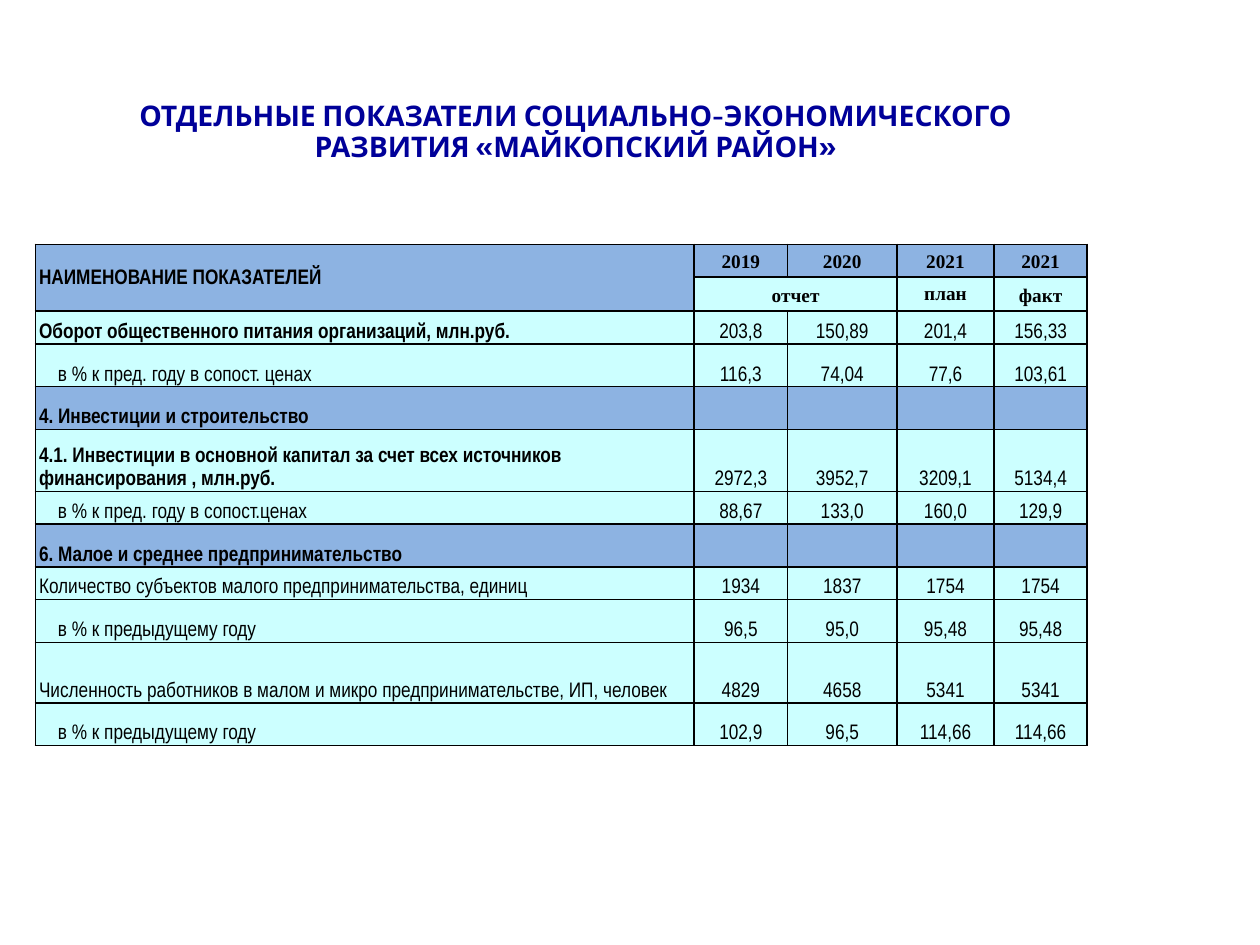
from lxml import etree
from pptx import Presentation
from pptx.dml.color import RGBColor
from pptx.enum.text import MSO_ANCHOR, PP_ALIGN
from pptx.oxml.ns import qn
from pptx.util import Inches, Pt

LEFT, MID = PP_ALIGN.LEFT, PP_ALIGN.CENTER
CENTER, BOTTOM = MSO_ANCHOR.MIDDLE, MSO_ANCHOR.BOTTOM
HUES = {"navy": "000099", "ink": "000000", "blue": "8DB3E2", "aqua": "CCFFFF"}
SANS, SERIF = "Arial Narrow", "Times New Roman"


def write(frame, text, font=SANS, size=12, bold=False, hue="ink",
          align=LEFT, space=1.15, indent=0):
    para = frame.paragraphs[0]
    para.text = text
    para.alignment = align
    para.line_spacing = space
    if indent:
        para._p.get_or_add_pPr().set("marL", str(Inches(indent)))
    face = para.font
    face.name, face.size, face.bold = font, Pt(size), bold
    face.color.rgb = RGBColor.from_string(HUES[hue])


def style(cell, hue, anchor):
    cell.margin_left = cell.margin_right = Inches(0.03)
    cell.margin_top = cell.margin_bottom = Inches(0.01)
    cell.vertical_anchor = anchor
    props = cell._tc.get_or_add_tcPr()
    for side in ("a:lnL", "a:lnR", "a:lnT", "a:lnB"):
        line = etree.SubElement(props, qn(side), w=str(Pt(1)))
        fill = etree.SubElement(line, qn("a:solidFill"))
        etree.SubElement(fill, qn("a:srgbClr"), val=HUES["ink"])
    cell.fill.solid()
    cell.fill.fore_color.rgb = RGBColor.from_string(HUES[hue])


deck = Presentation()
deck.slide_width, deck.slide_height = Inches(10), Inches(7.5)
wide, high = deck.slide_width, deck.slide_height
slide = deck.slides.add_slide(deck.slide_layouts[5])

# Title
title = slide.shapes.title
title.left, title.top = int(wide * 0.051), int(high * 0.07)
title.width, title.height = int(wide * 0.811), int(high * 0.136)
frame = title.text_frame
frame.word_wrap = True
frame.vertical_anchor = BOTTOM
frame.margin_left = frame.margin_right = Inches(0.05)
frame.margin_top, frame.margin_bottom = 0, Inches(0.25)
write(frame, "ОТДЕЛЬНЫЕ ПОКАЗАТЕЛИ СОЦИАЛЬНО-ЭКОНОМИЧЕСКОГО РАЗВИТИЯ «МАЙКОПСКИЙ РАЙОН»",
      font="Cabin", size=16.2, bold=True, hue="navy", align=MID, space=0.9)

# Body rows: kind, row height, label, values
ROWS = [
    ("bold", 0.26, "Оборот общественного питания организаций, млн.руб.",
     "203,8 150,89 201,4 156,33"),
    ("sub", 0.34, "в % к пред. году в сопост. ценах", "116,3 74,04 77,6 103,61"),
    ("head", 0.34, "4. Инвестиции и строительство", ""),
    ("bold", 0.49, "4.1. Инвестиции в основной капитал за счет всех источников "
     "финансирования , млн.руб.", "2972,3 3952,7 3209,1 5134,4"),
    ("sub", 0.26, "в % к пред. году в сопост.ценах", "88,67 133,0 160,0 129,9"),
    ("head", 0.34, "6. Малое и среднее предпринимательство", ""),
    ("plain", 0.26, "Количество субъектов малого предпринимательства, единиц",
     "1934 1837 1754 1754"),
    ("sub", 0.34, "в % к предыдущему году", "96,5 95,0 95,48 95,48"),
    ("plain", 0.48, "Численность работников в малом и микро предпринимательстве, "
     "ИП, человек", "4829 4658 5341 5341"),
    ("sub", 0.34, "в % к предыдущему году", "102,9 96,5 114,66 114,66"),
]
COLS = [5.23, 0.74, 0.87, 0.77, 0.74]
TALL = [0.26, 0.27] + [row[1] for row in ROWS]

# Table grid
table = slide.shapes.add_table(
    len(TALL), len(COLS), int(wide * 0.028), int(high * 0.2587),
    Inches(sum(COLS)), Inches(sum(TALL))).table
table.first_row = table.horz_banding = False
for col, size in zip(table.columns, COLS):
    col.width = Inches(size)
for row, size in zip(table.rows, TALL):
    row.height = Inches(size)

# Header
for r, hue in enumerate(("blue", "aqua")):
    for c in range(len(COLS)):
        style(table.cell(r, c), hue if c else "blue", CENTER)
table.cell(0, 0).merge(table.cell(1, 0))
table.cell(1, 1).merge(table.cell(1, 2))
write(table.cell(0, 0).text_frame, "НАИМЕНОВАНИЕ ПОКАЗАТЕЛЕЙ", bold=True)
HEADS = [(0, 1, "2019"), (0, 2, "2020"), (0, 3, "2021"), (0, 4, "2021"),
         (1, 1, "отчет"), (1, 3, "план"), (1, 4, "факт")]
for r, c, text in HEADS:
    write(table.cell(r, c).text_frame, text, font=SERIF, size=11, bold=True,
          align=MID, space=1.0 if text == "план" else 1.15)

# Body
for r, (kind, size, label, nums) in enumerate(ROWS, 2):
    for c in range(len(COLS)):
        style(table.cell(r, c), "blue" if kind == "head" else "aqua", BOTTOM)
    write(table.cell(r, 0).text_frame, label, bold=kind in ("bold", "head"),
          indent=0.15 if kind == "sub" else 0)
    for c, num in enumerate(nums.split(), 1):
        write(table.cell(r, c).text_frame, num, align=MID)

deck.save("out.pptx")
